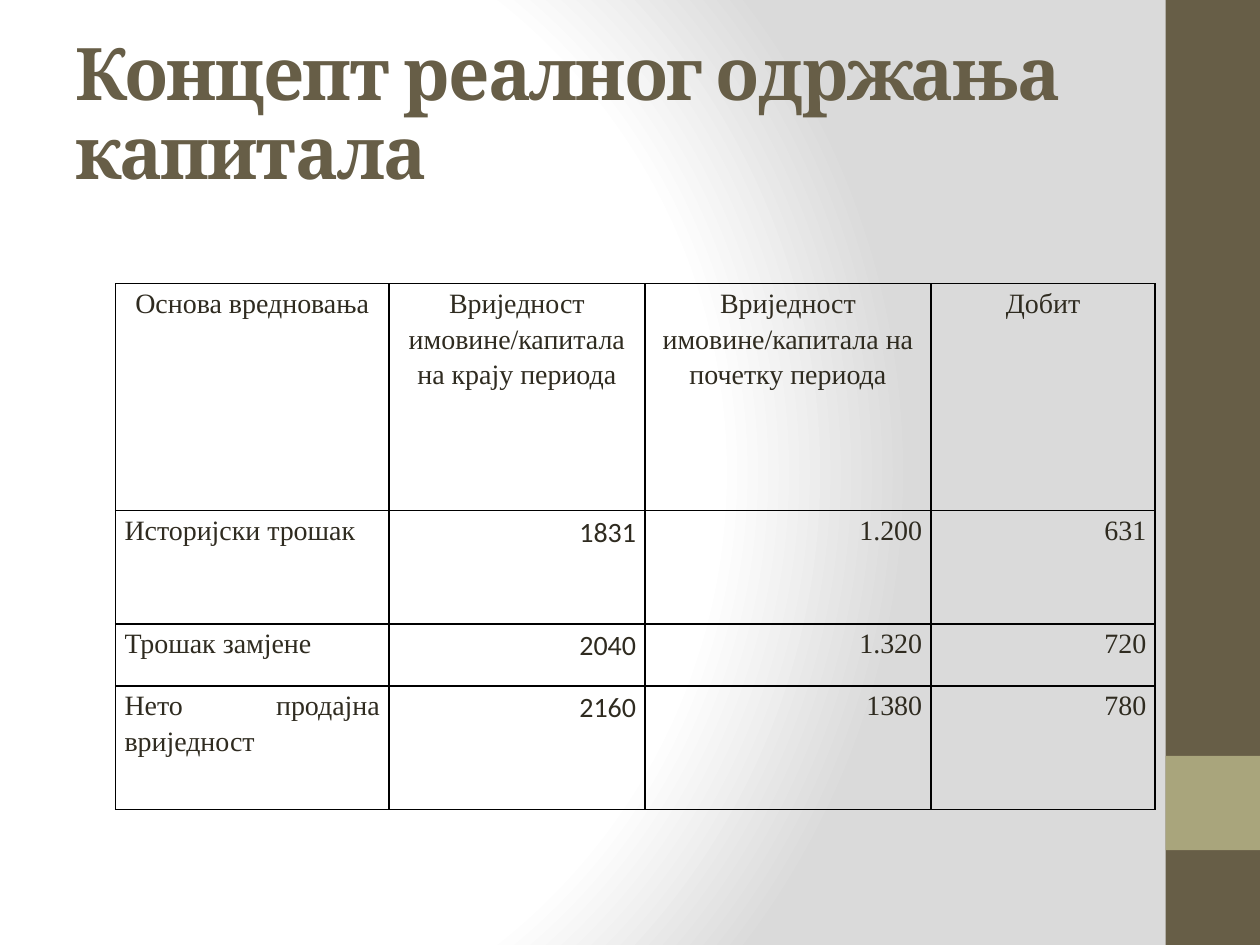
from typing import NamedTuple

from lxml.etree import SubElement
from pptx import Presentation
from pptx.dml.color import RGBColor
from pptx.enum.shapes import MSO_SHAPE
from pptx.enum.text import MSO_ANCHOR, MSO_AUTO_SIZE, PP_ALIGN
from pptx.oxml import parse_xml
from pptx.oxml.ns import nsdecls, qn
from pptx.util import Cm, Pt

BROWN = RGBColor(0x67, 0x5E, 0x47)
OLIVE = RGBColor(0xA9, 0xA5, 0x7C)
INK = RGBColor(0x2F, 0x2B, 0x20)
WHITE = RGBColor(0xFF, 0xFF, 0xFF)
GREY = RGBColor(0xDA, 0xDA, 0xDA)
BLACK = RGBColor(0, 0, 0)

TITLE_FONT, TEXT_FONT, RESULT_FONT = "Cambria", "Times New Roman", "Calibri"


class Band(NamedTuple):
    top: float
    height: float
    color: RGBColor


class Valuation(NamedTuple):
    basis: str
    closing: str
    opening: str
    profit: str


SIDE_LEFT, SIDE_WIDTH = 23.5, 1.9
SIDE_BANDS = [Band(0, 19.05, BROWN), Band(15.24, 1.9, OLIVE)]

VALUATIONS = [
    Valuation("Основа вредновања", "Вриједност имовине/капитала на крају периода",
              "Вриједност имовине/капитала на почетку периода", "Добит"),
    Valuation("Историјски трошак", "1831", "1.200", "631"),
    Valuation("Трошак замјене", "2040", "1.320", "720"),
    Valuation("Нето продајна вриједност", "2160", "1380", "780"),
]
COLUMN_WIDTHS = [5.51, 5.16, 5.77, 4.52]
ROW_HEIGHTS = [4.57, 2.29, 1.25, 2.49]


def paint_background(slide) -> None:
    """Circular gradient, white around the left and grey towards the right."""
    stops = "".join(
        f'<a:gs pos="{share * 1000}"><a:srgbClr val="{color}"/></a:gs>'
        for share, color in [(0, WHITE), (75, WHITE), (100, GREY)])
    slide.element.cSld.insert(0, parse_xml(
        f'<p:bg {nsdecls("p", "a")}><p:bgPr><a:gradFill rotWithShape="1">'
        f'<a:gsLst>{stops}</a:gsLst><a:path path="circle">'
        '<a:fillToRect l="20000" t="50000" r="100000" b="50000"/></a:path>'
        '</a:gradFill><a:effectLst/></p:bgPr></p:bg>'))


def draw_band(slide, band: Band) -> None:
    bar = slide.shapes.add_shape(MSO_SHAPE.RECTANGLE, Cm(SIDE_LEFT), Cm(band.top),
                                 Cm(SIDE_WIDTH), Cm(band.height))
    bar.shadow.inherit = False
    bar.fill.solid()
    bar.fill.fore_color.rgb = band.color
    bar.line.fill.background()


def write_title(slide, text: str) -> None:
    title = slide.shapes.title
    title.left, title.top, title.width, title.height = Cm(1.27), Cm(0.76), Cm(21.16), Cm(3.18)
    frame = title.text_frame
    frame.text = text
    frame.word_wrap = True
    frame.auto_size = MSO_AUTO_SIZE.NONE
    frame.vertical_anchor = MSO_ANCHOR.MIDDLE
    heading = frame.paragraphs[0]
    heading.alignment = PP_ALIGN.LEFT
    heading.line_spacing = 0.9
    heading.font.name = TITLE_FONT
    heading.font.size = Pt(41.4)
    heading.font.bold = True
    heading.font.color.rgb = BROWN
    heading.runs[0].font._element.set("spc", "-100")


def outline_cell(cell) -> None:
    properties = cell._tc.get_or_add_tcPr()
    for position, side in enumerate(("lnL", "lnR", "lnT", "lnB")):
        border = properties.makeelement(qn(f"a:{side}"), {"w": str(Pt(1))})
        fill = SubElement(border, qn("a:solidFill"))
        SubElement(fill, qn("a:srgbClr"), val=str(BLACK))
        properties.insert(position, border)


def write_cell(cell, text: str, alignment: PP_ALIGN, font_name: str) -> None:
    cell.text = text
    cell.margin_left = cell.margin_right = Cm(0.18)
    cell.margin_top = cell.margin_bottom = 0
    cell.fill.background()
    outline_cell(cell)
    entry = cell.text_frame.paragraphs[0]
    entry.alignment = alignment
    entry.line_spacing = 1.15
    entry.space_after = Pt(6)
    entry.font.name = font_name
    entry.font.size = Pt(16)
    entry.font.color.rgb = INK


def draw_valuations(slide) -> None:
    table = slide.shapes.add_table(
        len(VALUATIONS), len(COLUMN_WIDTHS), Cm(2.33), Cm(5.72),
        Cm(sum(COLUMN_WIDTHS)), Cm(sum(ROW_HEIGHTS))).table
    table.first_row = table.horz_banding = False
    for column, width in zip(table.columns, COLUMN_WIDTHS):
        column.width = Cm(width)
    for row, height in zip(table.rows, ROW_HEIGHTS):
        row.height = Cm(height)
    for r, valuation in enumerate(VALUATIONS):
        for c, text in enumerate(valuation):
            if r == 0:
                alignment = PP_ALIGN.CENTER
            else:
                alignment = PP_ALIGN.JUSTIFY if c == 0 else PP_ALIGN.RIGHT
            font_name = RESULT_FONT if r > 0 and c == 1 else TEXT_FONT
            write_cell(table.cell(r, c), text, alignment, font_name)


def main() -> None:
    deck = Presentation()
    deck.slide_width, deck.slide_height = Cm(25.4), Cm(19.05)
    slide = deck.slides.add_slide(deck.slide_layouts[5])
    paint_background(slide)
    for band in SIDE_BANDS:
        draw_band(slide, band)
    write_title(slide, "Концепт реалног одржања капитала")
    draw_valuations(slide)
    deck.save("out.pptx")


if __name__ == "__main__":
    main()
